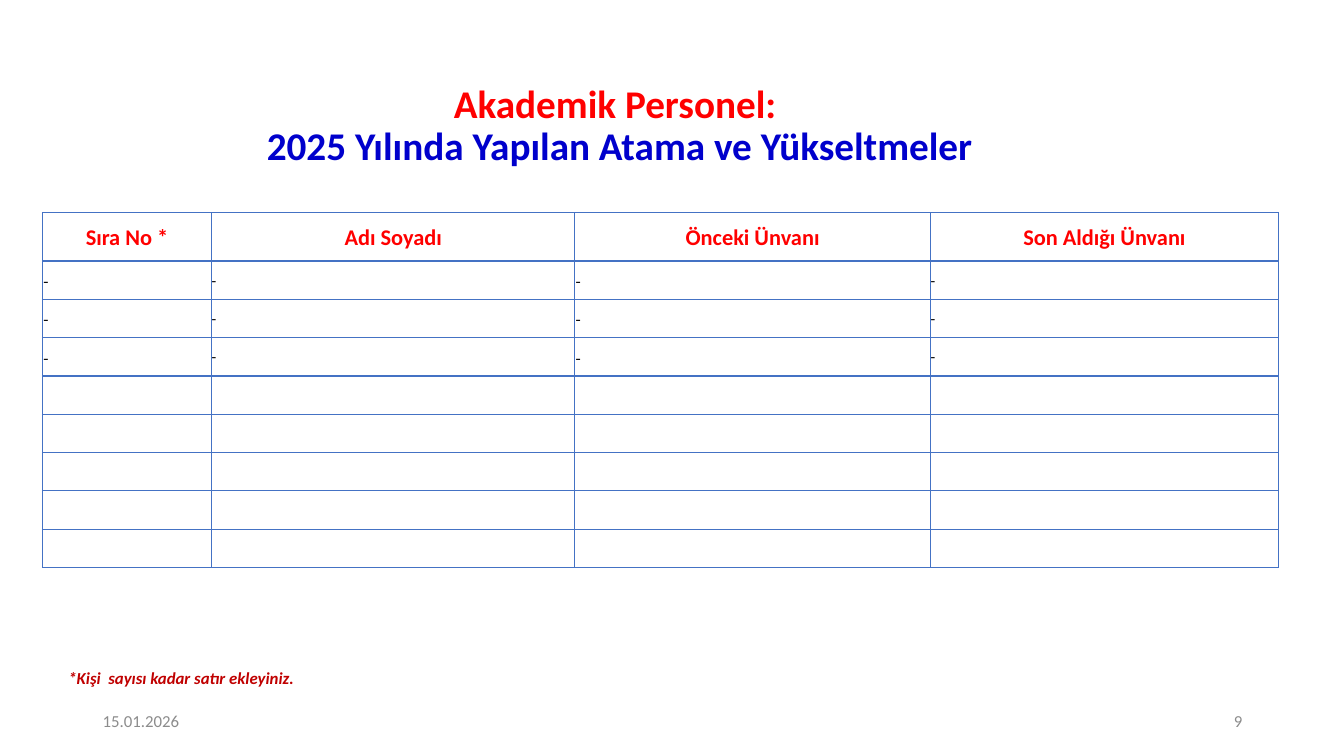
from lxml.etree import SubElement as Sub
from pptx import Presentation
from pptx.dml.color import RGBColor as RGB
from pptx.enum.text import MSO_ANCHOR as Anchor, MSO_AUTO_SIZE as Fit, PP_ALIGN as Align
from pptx.oxml.ns import qn
from pptx.util import Inches, Pt

RED, BLUE, GREY, DARK, BLACK = "FF0000", "0000CC", "8C8C8C", "C00000", "000000"
EDGE = "4472C4"


def tint(target, code):
    target.rgb = RGB.from_string(code)


def apply(target, values):
    for name, value in values.items():
        setattr(target, name, value)


class Page:
    font = "Calibri"

    def __init__(self, deck):
        self.slide = deck.slides.add_slide(deck.slide_layouts[5])

    def words(self, para, text, size, color, **style):
        run = para.add_run()
        run.text = text
        apply(run.font, {"name": self.font, "size": Pt(size), **style})
        tint(run.font.color, color)

    def title(self, box, lines):
        shape = self.slide.shapes.title
        apply(shape, dict(zip(("left", "top", "width", "height"), map(Inches, box))))
        frame = shape.text_frame
        apply(frame, {"auto_size": Fit.NONE, "vertical_anchor": Anchor.MIDDLE})
        para = frame.paragraphs[0]
        apply(para, {"alignment": Align.CENTER, "line_spacing": 0.9})
        for i, (text, color) in enumerate(lines):
            if i:
                para.add_line_break()
            self.words(para, text, 28, color, bold=True)

    def label(self, box, text, color, align=Align.LEFT, anchor=Anchor.MIDDLE,
              fit=Fit.NONE, **style):
        frame = self.slide.shapes.add_textbox(*map(Inches, box)).text_frame
        apply(frame, {"word_wrap": True, "auto_size": fit, "vertical_anchor": anchor})
        para = frame.paragraphs[0]
        para.alignment = align
        self.words(para, text, 12, color, **style)

    def border(self, cell):
        props = cell._tc.get_or_add_tcPr()
        for side in ("lnL", "lnR", "lnT", "lnB"):
            line = Sub(props, qn("a:" + side), w=str(Pt(1)))
            fill = Sub(line, qn("a:solidFill"))
            Sub(fill, qn("a:srgbClr"), val=EDGE)

    def cell(self, cell, text, head, inner):
        self.border(cell)
        cell.fill.background()
        pad = Inches(0.01 if inner else 0)
        apply(cell, {"margin_left": pad, "margin_right": pad, "margin_top": pad,
                     "margin_bottom": 0, "vertical_anchor": Anchor.MIDDLE})
        if not text:
            return
        para = cell.text_frame.paragraphs[0]
        para.line_spacing = 1.07
        if head or not inner:
            para.space_after = Pt(8)
        if head:
            para.alignment = Align.CENTER
            self.words(para, text, 16, RED, bold=True)
        else:
            name = "Times New Roman" if inner else self.font
            self.words(para, text, 11, BLACK, name=name, bold=False)

    def table(self, box, widths, heights, rows):
        grid = self.slide.shapes.add_table(len(rows), len(widths), *map(Inches, box)).table
        apply(grid, {"first_row": False, "horz_banding": False})
        for col, width in zip(grid.columns, widths):
            col.width = Inches(width)
        for r, (row, height) in enumerate(zip(grid.rows, heights)):
            row.height = Inches(height)
            for c, text in enumerate(rows[r]):
                self.cell(grid.cell(r, c), text, head=r == 0, inner=c % 2 == 0)


def main():
    deck = Presentation()
    apply(deck, {"slide_width": Inches(13.33), "slide_height": Inches(7.5)})
    page = Page(deck)

    # Heading
    page.title((0.36, 0.87, 11.48, 0.78),
               [("Akademik Personel:", RED),
                (" 2025 Yılında Yapılan Atama ve Yükseltmeler", BLUE)])

    # Footer
    page.label((0.92, 6.95, 3, 0.4), "15.01.2026", GREY)
    page.label((9.42, 6.95, 3, 0.4), "9", GREY, Align.RIGHT)

    # Appointments: header, three dashed rows, five empty rows
    heads = ["Sıra No *", "Adı Soyadı", "Önceki Ünvanı", "Son Aldığı Ünvanı"]
    page.table((0.42, 2.11, 12.26, 3.52), [1.68, 3.6, 3.53, 3.45],
               [0.48] + [0.38] * 8, [heads] + [["-"] * 4] * 3 + [[""] * 4] * 5)

    # Footnote
    page.label((0.58, 6.58, 8.48, 0.3), "*Kişi  sayısı kadar satır ekleyiniz.", DARK,
               anchor=Anchor.TOP, fit=Fit.SHAPE_TO_FIT_TEXT, bold=True, italic=True)

    deck.save("out.pptx")


if __name__ == "__main__":
    main()
